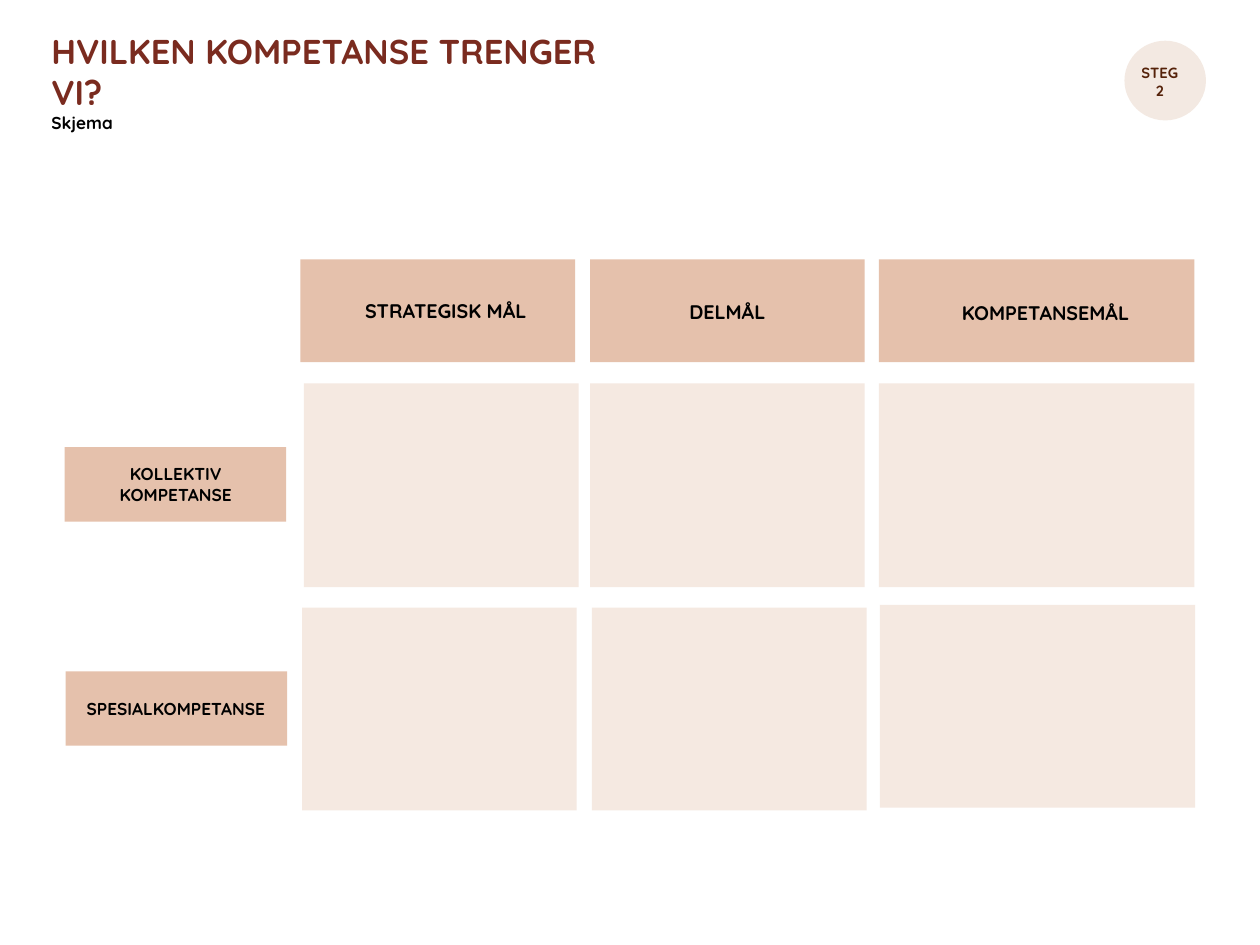
from dataclasses import dataclass

import pptx
import pptx.dml.color
import pptx.enum.shapes
import pptx.enum.text
import pptx.util

Inches = pptx.util.Inches
Pt = pptx.util.Pt
SHAPE = pptx.enum.shapes.MSO_SHAPE
ALIGN = pptx.enum.text.PP_ALIGN
ANCHOR = pptx.enum.text.MSO_ANCHOR

FONT = "Quicksand"
HEADER, CELL, BADGE = "E5C1AC", "F5E9E1", "F3E9E2"
BLACK, TITLE, STEP = "000000", "7A2B1F", "55220A"
COLUMN_WIDTHS = (3.1, 3.1, 3.56)


@dataclass
class GridRow:
    lefts: tuple[float, ...]
    tops: tuple[float, ...]
    height: float
    color: str


@dataclass
class Label:
    text: str
    left: float
    top: float
    width: float
    height: float
    size: int
    color: str = BLACK
    align: ALIGN = ALIGN.CENTER
    anchor: ANCHOR = ANCHOR.TOP


GRID = [
    GridRow((3.39, 6.66, 9.92), (2.93, 2.93, 2.93), 1.16, HEADER),
    GridRow((3.43, 6.66, 9.92), (4.33, 4.33, 4.33), 2.3, CELL),
    GridRow((3.41, 6.68, 9.93), (6.86, 6.86, 6.83), 2.29, CELL),
]
ROW_HEADS = [(0.73, 5.05), (0.74, 7.58)]
LABELS = [
    Label("STEG 2", 12.79, 0.76, 0.6, 0.32, 12, STEP, anchor=ANCHOR.MIDDLE),
    Label("STRATEGISK MÅL", 4.06, 3.31, 2.05, 0.4, 16, align=ALIGN.LEFT),
    Label("DELMÅL", 7.51, 3.33, 1.4, 0.4, 16),
    Label("KOMPETANSEMÅL", 10.74, 3.33, 2.12, 0.4, 16, anchor=ANCHOR.MIDDLE),
    Label("KOLLEKTIV KOMPETANSE", 0.85, 5.17, 2.27, 0.6, 14),
    Label("SPESIALKOMPETANSE", 0.49, 7.83, 2.99, 0.54, 14),
]


def rgb(color: str) -> pptx.dml.color.RGBColor:
    return pptx.dml.color.RGBColor.from_string(color)


def add_block(s, kind: SHAPE, left: float, top: float, width: float,
              height: float, color: str) -> None:
    sp = s.shapes.add_shape(kind, Inches(left), Inches(top), Inches(width), Inches(height))
    sp.shadow.inherit = False
    sp.fill.solid()
    sp.fill.fore_color.rgb = rgb(color)
    sp.line.fill.background()


def setup_frame(tf, anchor: ANCHOR) -> None:
    tf.word_wrap = True
    tf.auto_size = pptx.enum.text.MSO_AUTO_SIZE.NONE
    tf.vertical_anchor = anchor
    tf.margin_left = tf.margin_right = tf.margin_top = tf.margin_bottom = Inches(0.06)


def add_run(p, text: str, size: int, color: str, align: ALIGN) -> None:
    p.alignment = align
    r = p.add_run()
    r.text = text
    r.font.name = FONT
    r.font.size = Pt(size)
    r.font.bold = True
    r.font.color.rgb = rgb(color)


def add_label(s, label: Label) -> None:
    sp = s.shapes.add_textbox(Inches(label.left), Inches(label.top),
                              Inches(label.width), Inches(label.height))
    tf = sp.text_frame
    setup_frame(tf, label.anchor)
    add_run(tf.paragraphs[0], label.text, label.size, label.color, label.align)


def add_title(s) -> None:
    sp = s.shapes.title
    sp.left, sp.top, sp.width, sp.height = (Inches(v) for v in (0.52, 0.51, 6.82, 0.82))
    tf = sp.text_frame
    setup_frame(tf, ANCHOR.MIDDLE)
    add_run(tf.paragraphs[0], "HVILKEN KOMPETANSE TRENGER VI?", 28, TITLE, ALIGN.LEFT)
    add_run(tf.add_paragraph(), "Skjema", 14, BLACK, ALIGN.LEFT)


def main() -> None:
    prs = pptx.Presentation()
    prs.slide_width, prs.slide_height = Inches(14.22), Inches(10.67)
    s = prs.slides.add_slide(prs.slide_layouts[5])

    # Title and step badge
    add_title(s)
    add_block(s, SHAPE.OVAL, 12.69, 0.46, 0.92, 0.9, BADGE)

    # Form grid with its row heads
    for row in GRID:
        for left, top, width in zip(row.lefts, row.tops, COLUMN_WIDTHS):
            add_block(s, SHAPE.RECTANGLE, left, top, width, row.height, row.color)
    for left, top in ROW_HEADS:
        add_block(s, SHAPE.RECTANGLE, left, top, 2.5, 0.84, HEADER)

    # Texts on top
    for label in LABELS:
        add_label(s, label)

    prs.save("out.pptx")


if __name__ == "__main__":
    main()
